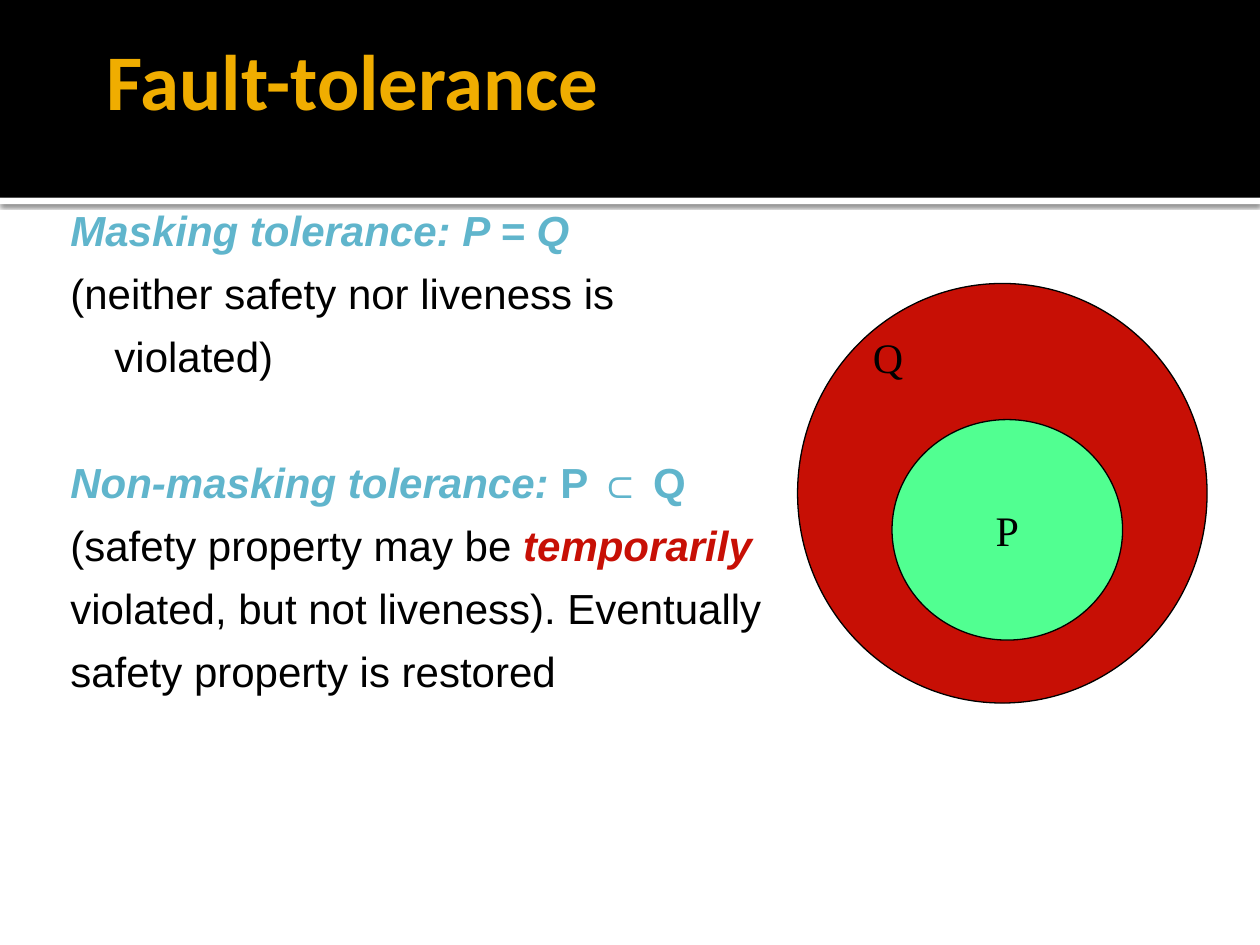
"""Build the fault-tolerance slide with its P inside Q set diagram."""
import pptx
import pptx.dml.color
import pptx.enum.shapes
import pptx.enum.text
import pptx.util
from lxml import etree
from pptx.oxml.ns import qn

Inches = pptx.util.Inches
Pt = pptx.util.Pt
RGBColor = pptx.dml.color.RGBColor
SHAPE = pptx.enum.shapes.MSO_SHAPE
ANCHOR = pptx.enum.text.MSO_ANCHOR
ALIGN = pptx.enum.text.PP_ALIGN

WHITE = RGBColor(0xFF, 0xFF, 0xFF)
BLACK = RGBColor(0x00, 0x00, 0x00)
GOLD = RGBColor(0xF0, 0xAD, 0x00)
BLUE = RGBColor(0x60, 0xB5, 0xCC)
RED = RGBColor(0xC7, 0x0F, 0x05)
GREEN = RGBColor(0x51, 0xFF, 0x91)

HEADING = ("Arial", 24, BLUE, True, True)
FORMULA = ("Arial", 24, BLUE, True, False)
SYMBOL = ("Arial", 24, BLUE, False, False)
PLAIN = ("Arial", 24, BLACK, False, False)
STRESS = ("Arial", 24, RED, True, True)
TITLE = ("Calibri", 45, GOLD, True, False)
LABEL = ("Times New Roman", 24, BLACK, False, False)

LINE_PITCH = 36
TOLERANCES = [
    [
        [("Masking tolerance: P = Q", HEADING)],
        [("(neither safety nor liveness is violated)", PLAIN)],
    ],
    [
        [("Non-masking tolerance: ", HEADING), ("P ", FORMULA),
         ("⊂", SYMBOL), (" Q", FORMULA)],
        [("(safety property may be ", PLAIN), ("temporarily", STRESS)],
        [("violated, but not liveness). Eventually", PLAIN)],
        [("safety property is restored", PLAIN)],
    ],
]


def add_run(paragraph, words, style):
    run = paragraph.add_run()
    run.text = words
    font = run.font
    font.name, size, font.color.rgb, font.bold, font.italic = style
    font.size = Pt(size)


def add_figure(slide, kind, box, fill, outline=None):
    figure = slide.shapes.add_shape(kind, *map(Inches, box))
    figure.shadow.inherit = False
    figure.fill.solid()
    figure.fill.fore_color.rgb = fill
    if outline is None:
        figure.line.fill.background()
    else:
        figure.line.color.rgb = outline
        figure.line.width = Pt(0.75)
    return figure


def add_frame(slide, box, top=0.05, right=0.1):
    frame = slide.shapes.add_textbox(*map(Inches, box)).text_frame
    frame.word_wrap = True
    frame.margin_top = Inches(top)
    frame.margin_right = Inches(right)
    return frame


def cast_shadow(figure):
    effects = figure.element.spPr.find(qn("a:effectLst"))
    shadow = etree.SubElement(
        effects, qn("a:outerShdw"), blurRad=str(Pt(2.5)), dist=str(Pt(0.8)),
        dir="5400000", algn="tl", rotWithShape="0")
    tint = etree.SubElement(shadow, qn("a:srgbClr"), val=str(BLACK))
    etree.SubElement(tint, qn("a:alpha"), val="60000")


def add_tolerances(slide):
    frame = add_frame(slide, (0.33, 1.42, 5.92, 4.5), top=0.1)
    paragraph = None
    for group in TOLERANCES:
        for row, runs in enumerate(group):
            first = paragraph is None
            paragraph = frame.paragraphs[0] if first else frame.add_paragraph()
            paragraph.line_spacing = Pt(LINE_PITCH)
            if row == 0 and not first:
                paragraph.space_before = Pt(LINE_PITCH)
            properties = paragraph._p.get_or_add_pPr()
            properties.set("marL", str(Inches(0.48)))
            properties.set("indent", str(Inches(-0.35)))
            for words, style in runs:
                add_run(paragraph, words, style)


def main():
    deck = pptx.Presentation()
    deck.slide_width, deck.slide_height = Inches(10), Inches(7.5)
    slide = deck.slides.add_slide(deck.slide_layouts[6])

    cast_shadow(add_figure(slide, SHAPE.RECTANGLE, (0, 1.57, 10, 0.05), WHITE))
    add_figure(slide, SHAPE.RECTANGLE, (0, 0, 10, 1.57), BLACK)

    title = add_frame(slide, (0.75, 0, 8.5, 1.25), right=0.05)
    title.vertical_anchor = ANCHOR.MIDDLE
    add_run(title.paragraphs[0], "Fault-tolerance", TITLE)

    add_tolerances(slide)

    add_figure(slide, SHAPE.OVAL, (6.33, 2.25, 3.25, 3.33), RED, BLACK)
    inner = add_figure(slide, SHAPE.OVAL, (7.08, 3.33, 1.83, 1.75), GREEN, BLACK)
    inner.text_frame.word_wrap = False
    inner.text_frame.vertical_anchor = ANCHOR.MIDDLE
    inner.text_frame.paragraphs[0].alignment = ALIGN.CENTER
    add_run(inner.text_frame.paragraphs[0], "P", LABEL)
    outer_label = add_frame(slide, (6.83, 2.58, 0.67, 0.5))
    add_run(outer_label.paragraphs[0], "Q", LABEL)

    deck.save("out.pptx")


if __name__ == "__main__":
    main()
